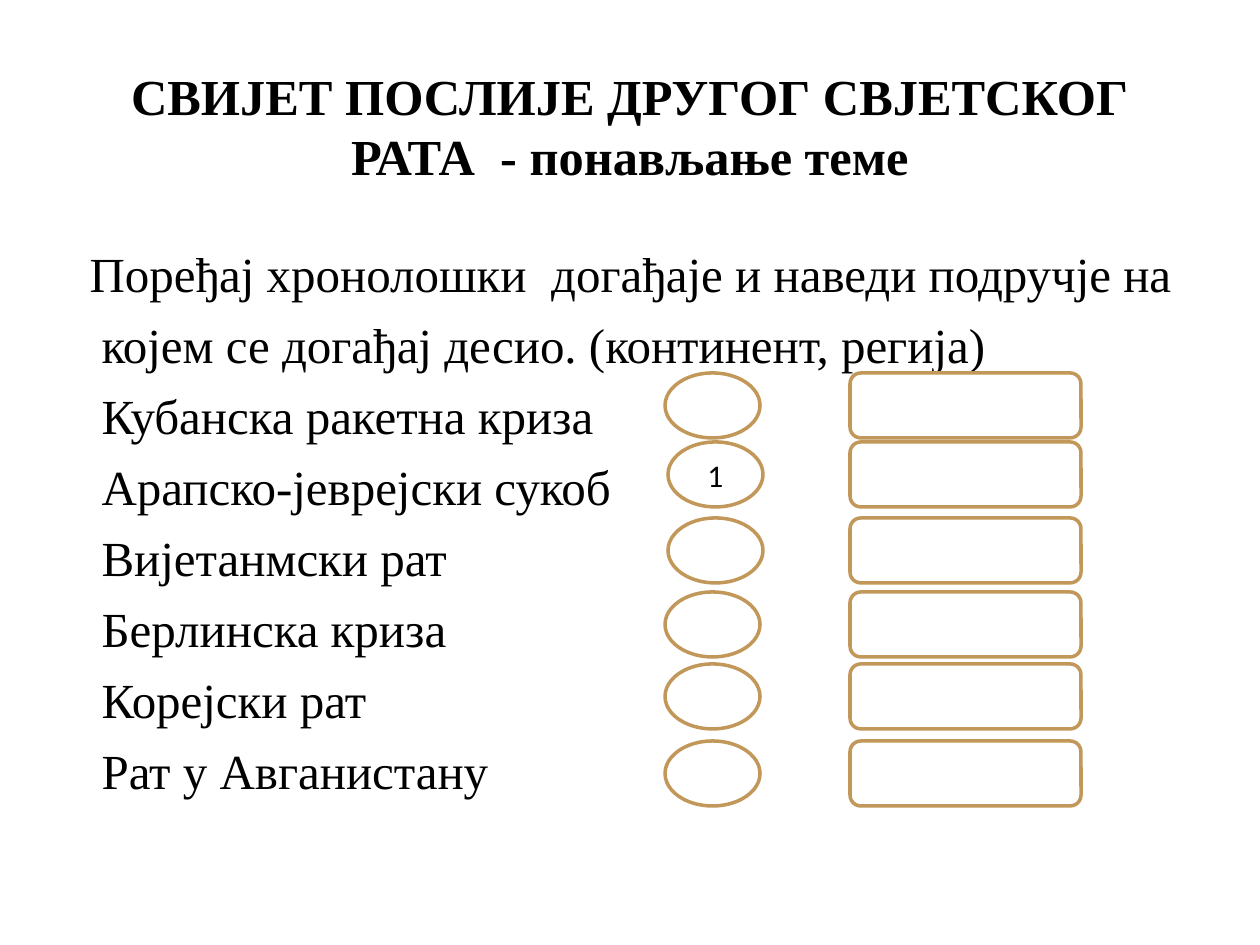
from pptx import Presentation
from pptx.dml.color import RGBColor
from pptx.enum.shapes import MSO_SHAPE
from pptx.enum.text import MSO_ANCHOR, MSO_AUTO_SIZE, PP_ALIGN
from pptx.oxml.ns import qn
from pptx.util import Pt
from lxml import etree

OVAL, ROUNDED = MSO_SHAPE.OVAL, MSO_SHAPE.ROUNDED_RECTANGLE
MIDDLE, TOP = MSO_ANCHOR.MIDDLE, MSO_ANCHOR.TOP
CENTER, LEFT = PP_ALIGN.CENTER, PP_ALIGN.LEFT
NO_FIT = MSO_AUTO_SIZE.NONE

BLACK = RGBColor(0x00, 0x00, 0x00)
WHITE = RGBColor(0xFF, 0xFF, 0xFF)
TAN = RGBColor(0xC1, 0x98, 0x59)

TITLE_FONT = {"name": "Times New Roman", "size": Pt(28.8), "bold": True}
BODY_FONT = {"name": "Times New Roman", "size": Pt(28), "bold": False}
NUMBER_FONT = {"name": "Calibri", "size": Pt(18)}

TITLE = "СВИЈЕТ ПОСЛИЈЕ ДРУГОГ СВЈЕТСКОГ РАТА  - понављање теме"
LINES = [
    "Поређај хронолошки  догађаје и наведи подручје на",
    "којем се догађај десио. (континент, регија)",
    "Кубанска ракетна криза",
    "Арапско-јеврејски сукоб",
    "Вијетанмски рат",
    "Берлинска криза",
    "Корејски рат",
    "Рат у Авганистану",
]
ROWS = [
    (373, 665, ""),
    (442, 668, "1"),
    (518, 668, ""),
    (592, 665, ""),
    (664, 665, ""),
    (741, 665, ""),
]


def px(n):
    return round(n * 914400 / 126)


def set_attrs(obj, values):
    for name, value in values.items():
        setattr(obj, name, value)


def style_font(font, values):
    set_attrs(font, values)
    font.color.rgb = BLACK


def place(sp, left, top, width, height):
    set_attrs(sp, {"left": px(left), "top": px(top),
                   "width": px(width), "height": px(height)})


def add_title(s):
    sp = s.shapes.title
    place(sp, 63, 20, 1134, 309)
    tf = sp.text_frame
    set_attrs(tf, {"word_wrap": True, "auto_size": NO_FIT, "vertical_anchor": MIDDLE,
                   "margin_top": px(6), "margin_bottom": px(104)})
    p = tf.paragraphs[0]
    p.alignment = CENTER
    r = p.add_run()
    r.text = TITLE
    style_font(r.font, TITLE_FONT)


def add_body(s):
    sp = s.placeholders[1]
    place(sp, 53, 231, 1144, 614)
    tf = sp.text_frame
    set_attrs(tf, {"word_wrap": True, "auto_size": NO_FIT,
                   "vertical_anchor": TOP, "margin_top": px(12)})
    for i, line in enumerate(LINES):
        p = tf.add_paragraph() if i else tf.paragraphs[0]
        pPr = p._p.get_or_add_pPr()
        pPr.set("marL", str(px(36 if i else 24)))
        pPr.set("indent", "0")
        etree.SubElement(pPr, qn("a:buNone"))
        set_attrs(p, {"alignment": LEFT, "space_before": Pt(7 if i else 0)})
        r = p.add_run()
        r.text = line
        style_font(r.font, BODY_FONT)


def add_answer(s, kind, left, top, width, text=""):
    sp = s.shapes.add_shape(kind, px(left), px(top), px(width), px(65))
    sp.shadow.inherit = False
    sp.fill.solid()
    sp.fill.fore_color.rgb = WHITE
    sp.line.color.rgb = TAN
    sp.line.width = Pt(2)
    if text:
        tf = sp.text_frame
        tf.vertical_anchor = MIDDLE
        p = tf.paragraphs[0]
        p.alignment = CENTER
        r = p.add_run()
        r.text = text
        style_font(r.font, NUMBER_FONT)


def main():
    prs = Presentation()
    prs.slide_width, prs.slide_height = px(1260), px(945)
    s = prs.slides.add_slide(prs.slide_layouts[1])
    add_title(s)
    add_body(s)
    for top, left, number in ROWS:
        add_answer(s, OVAL, left, top, 95, number)
        add_answer(s, ROUNDED, 850, top, 231)
    prs.save("out.pptx")


if __name__ == "__main__":
    main()
